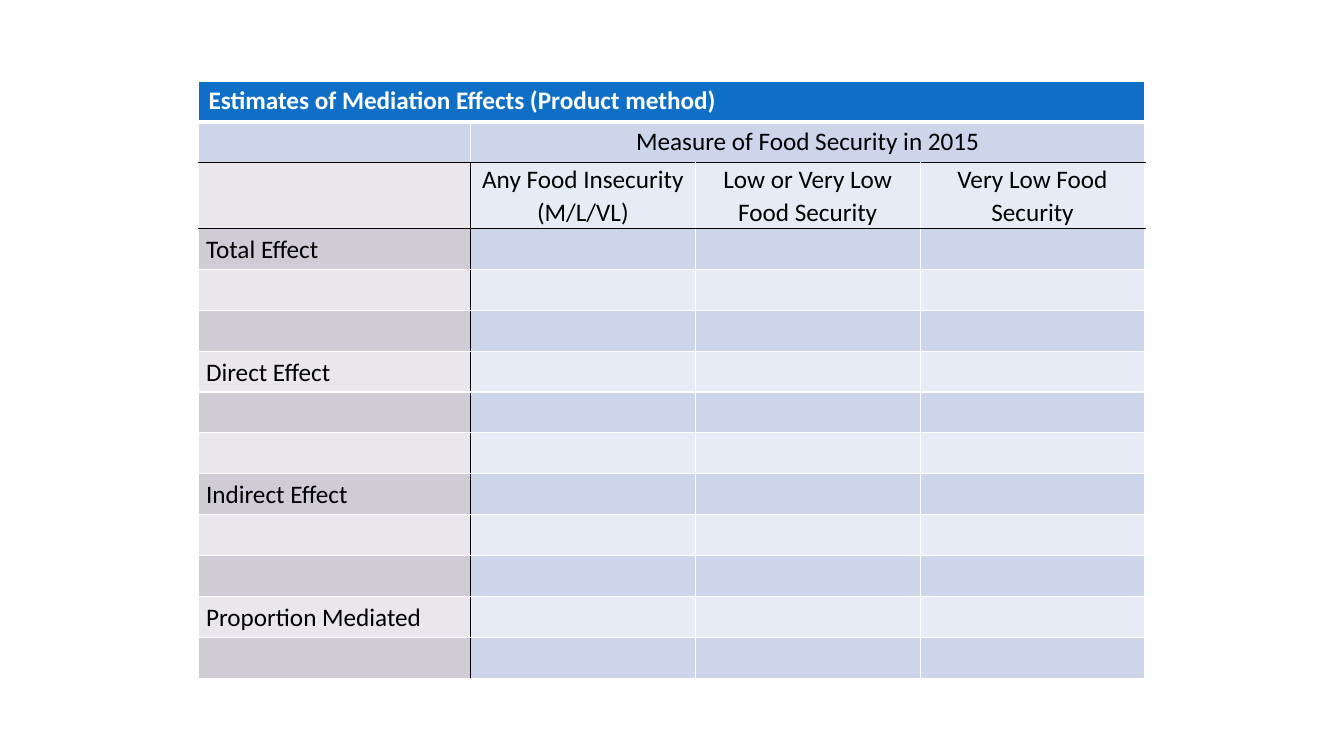
from lxml.etree import SubElement
from pptx import Presentation
from pptx.dml.color import RGBColor
from pptx.enum.text import MSO_ANCHOR as Anchor, PP_ALIGN as Align
from pptx.oxml.ns import qn
from pptx.util import Pt

COLORS = {
    "title": "0F6FC6",
    "band_dark": "CCD5EA",
    "band_light": "E7EBF5",
    "label_dark": "D0CCD6",
    "label_light": "E9E7EC",
    "white": "FFFFFF",
    "black": "000000",
}
TABLE_BOX = (141.8, 57.8, 676.1, 425.1)
LABEL_WIDTH = 194.3
HEADING_HEIGHT = 46
TITLE_ROW, MEASURE_ROW, HEADING_ROW = range(3)
ROWS, COLUMNS = 14, 4

TITLE = "Estimates of Mediation Effects (Product method)"
MEASURE = "Measure of Food Security in 2015"
HEADINGS = [
    "Any Food Insecurity\v(M/L/VL)",
    "Low or Very Low Food Security",
    "Very Low Food Security",
]
EFFECTS = ["Total Effect", "Direct Effect", "Indirect Effect", "Proportion Mediated"]
EFFECT_STEP = 3

TIGHT = {"margin_left": Pt(5.4), "margin_right": Pt(5.4), "margin_top": 0, "margin_bottom": 0}
HEADING_CELL = {**TIGHT, "vertical_anchor": Anchor.BOTTOM}
EFFECT_CELL = {**TIGHT, "vertical_anchor": Anchor.MIDDLE}
HEADING_PARA = {"alignment": Align.CENTER, "line_spacing": 1.07}


def set_values(target, values):
    for name, value in values.items():
        setattr(target, name, value)


def fill_color(row, column):
    if row == TITLE_ROW:
        return "title"
    kind = "label" if column == 0 and row >= HEADING_ROW else "band"
    return f"{kind}_{'dark' if row % 2 else 'light'}"


def cell_edges(row, column):
    """Give the colour and width of each edge: a frame under the headings and beside the labels."""
    in_body = row >= HEADING_ROW
    return {
        "L": ("black" if in_body and column == 1 else "white", 1),
        "R": ("black" if in_body and column == 0 else "white", 1),
        "T": ("black" if row in (HEADING_ROW, HEADING_ROW + 1) else "white",
              3 if row == MEASURE_ROW else 1),
        "B": ("black" if row in (MEASURE_ROW, HEADING_ROW) else "white",
              3 if row == TITLE_ROW else 1),
    }


def paint_cell(cell, row, column):
    properties = cell._tc.get_or_add_tcPr()
    for side, (color, width) in cell_edges(row, column).items():
        line = SubElement(properties, qn(f"a:ln{side}"), w=str(Pt(width)))
        solid = SubElement(line, qn("a:solidFill"))
        SubElement(solid, qn("a:srgbClr"), val=COLORS[color])
    cell.fill.solid()
    cell.fill.fore_color.rgb = RGBColor.from_string(COLORS[fill_color(row, column)])


def write_cell(cell, text, cell_format, para_format, color="black", bold=False):
    set_values(cell, cell_format)
    cell.text_frame.text = text
    para = cell.text_frame.paragraphs[0]
    set_values(para, para_format)
    for span in para.runs:
        set_values(span.font, {"name": "Calibri", "size": Pt(18), "bold": bold})
        span.font.color.rgb = RGBColor.from_string(COLORS[color])


def write_texts(table):
    write_cell(table.cell(TITLE_ROW, 0), TITLE, {}, {}, "white", True)
    write_cell(table.cell(MEASURE_ROW, 1), MEASURE,
               {"vertical_anchor": Anchor.MIDDLE}, {"alignment": Align.CENTER})
    for column, heading in enumerate(HEADINGS, 1):
        write_cell(table.cell(HEADING_ROW, column), heading, HEADING_CELL, HEADING_PARA)
    for index, effect in enumerate(EFFECTS):
        row = HEADING_ROW + 1 + index * EFFECT_STEP
        write_cell(table.cell(row, 0), effect, EFFECT_CELL, {"line_spacing": 1.07})


def add_effects_table(page, box):
    left, top, width, height = box
    frame = page.shapes.add_table(ROWS, COLUMNS, Pt(left), Pt(top), Pt(width), Pt(height))
    table = frame.table
    set_values(table, {"first_row": False, "horz_banding": False})

    value_width = (width - LABEL_WIDTH) / (COLUMNS - 1)
    for index, column in enumerate(table.columns):
        column.width = Pt(value_width if index else LABEL_WIDTH)
    row_height = (height - HEADING_HEIGHT) / (ROWS - 1)
    for index, row in enumerate(table.rows):
        row.height = Pt(HEADING_HEIGHT if index == HEADING_ROW else row_height)

    for row in range(ROWS):
        for column in range(COLUMNS):
            paint_cell(table.cell(row, column), row, column)
    for row, first in ((TITLE_ROW, 0), (MEASURE_ROW, 1)):
        table.cell(row, first).merge(table.cell(row, COLUMNS - 1))
    write_texts(table)


def main():
    deck = Presentation()
    set_values(deck, {"slide_width": Pt(960), "slide_height": Pt(540)})
    page = deck.slides.add_slide(deck.slide_layouts[6])
    add_effects_table(page, TABLE_BOX)
    deck.save("out.pptx")


if __name__ == "__main__":
    main()
